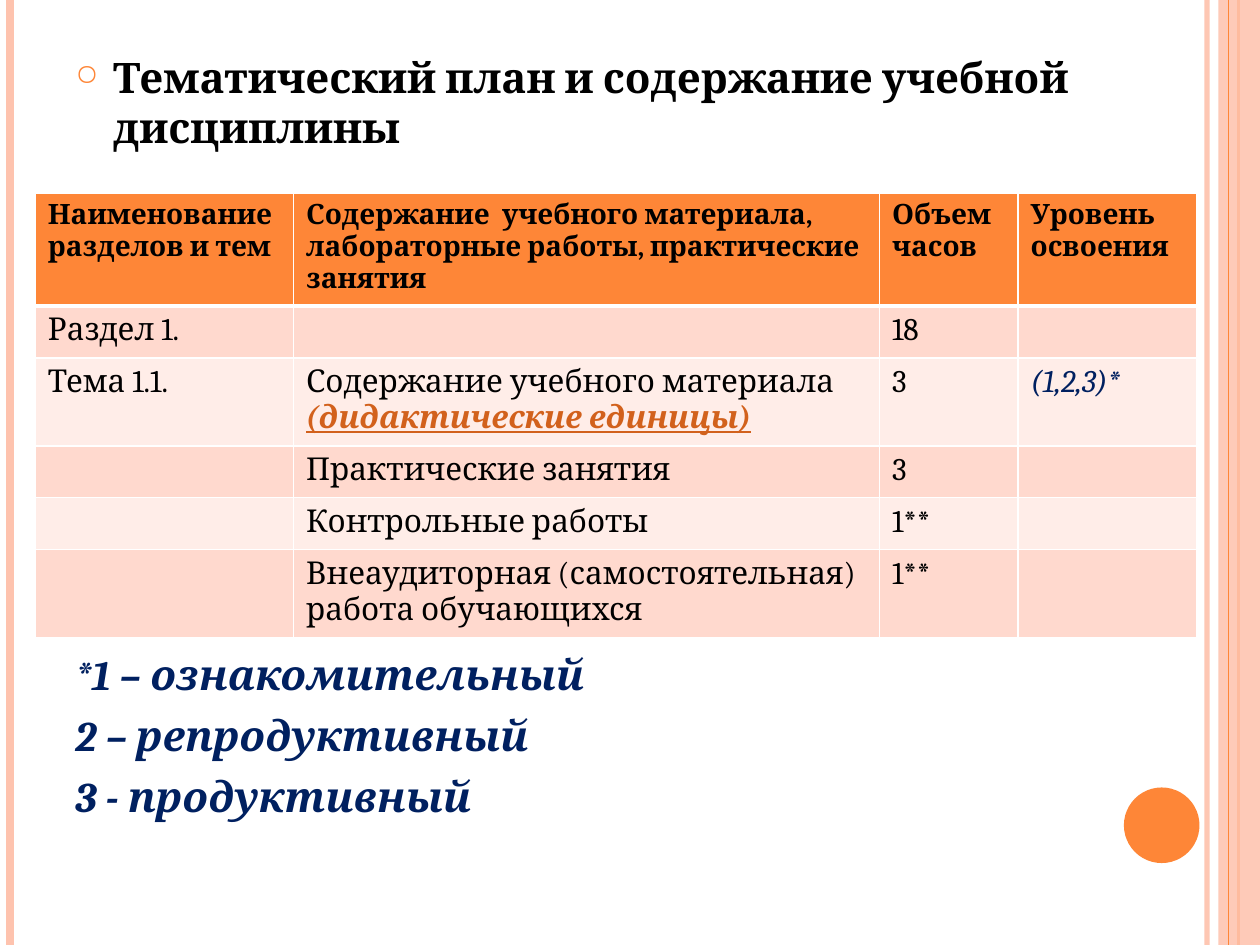
from dataclasses import dataclass

from lxml import etree
from pptx import Presentation
from pptx.dml.color import RGBColor
from pptx.enum import shapes, text
from pptx.oxml.ns import qn
from pptx.util import Inches, Pt


@dataclass(frozen=True)
class Theme:
    font: str = "Cambria"
    black: str = "000000"
    white: str = "FFFFFF"
    navy: str = "002060"
    orange: str = "FE8637"
    rust: str = "D2611C"
    peach: str = "FEC3AE"
    bands: tuple = ("FFD9CE", "FFEDE8")
    title: int = 24
    head: int = 16
    body: int = 18


def add(node, tag, **attrs):
    return etree.SubElement(node, qn(tag), attrs)


def fade(fill, share):
    """Set the opacity of a solid fill, in percent."""
    color = next(fill.iter(qn("a:srgbClr")))
    add(color, "a:alpha", val=str(share * 1000))


class Board:
    def __init__(self, slide, theme):
        self.slide, self.theme = slide, theme

    def style(self, run, size, color, bold=False, italic=False, under=False):
        font = run.font
        font.name, font.size = self.theme.font, Pt(size)
        font.bold, font.italic, font.underline = bold, italic, under
        font.color.rgb = RGBColor.from_string(color)

    def rule(self, x, color, width, share=100):
        """Draw a vertical line over the full slide height."""
        line = self.slide.shapes.add_connector(
            shapes.MSO_CONNECTOR.STRAIGHT, Inches(x), 0, Inches(x), Inches(7.5))
        line.line.color.rgb = RGBColor.from_string(color)
        line.line.width = Pt(width)
        if share < 100:
            fade(line._element.spPr, share)
        add(line._element.spPr, "a:effectLst")

    def shape(self, kind, box, color, share=100):
        item = self.slide.shapes.add_shape(kind, *map(Inches, box))
        item.shadow.inherit = False
        item.fill.solid()
        item.fill.fore_color.rgb = RGBColor.from_string(color)
        item.line.fill.background()
        if share < 100:
            fade(item._element.spPr, share)

    def text(self, box, lines, color, italic=False, bullet=None):
        frame = self.slide.shapes.add_textbox(*map(Inches, box)).text_frame
        frame.word_wrap = True
        frame.vertical_anchor = text.MSO_ANCHOR.TOP
        frame.text = "\n".join(lines)
        for para in frame.paragraphs:
            para.space_before = Pt(6)
            self.style(para.runs[0], self.theme.title, color, True, italic)
            if bullet:
                self.mark(para, bullet)

    def mark(self, para, sign):
        """Give a paragraph a hanging bullet."""
        props = para._p.get_or_add_pPr()
        props.set("marL", str(Inches(0.3)))
        props.set("indent", str(-Inches(0.3)))
        color = add(props, "a:buClr")
        add(color, "a:srgbClr", val=self.theme.orange)
        add(props, "a:buSzPct", val="70000")
        add(props, "a:buChar", char=sign)

    def edge(self, cell, bottom):
        props = cell._tc.get_or_add_tcPr()
        widths = (("L", 1), ("R", 1), ("T", 1), ("B", bottom))
        for spot, (side, width) in enumerate(widths):
            line = etree.Element(qn(f"a:ln{side}"), w=str(Pt(width)))
            fill = add(line, "a:solidFill")
            add(fill, "a:srgbClr", val=self.theme.white)
            props.insert(spot, line)

    def table(self, spot, cols, rows, data):
        """Fill a banded table; a cell is plain text or (text, style) runs."""
        look = self.theme
        grid = self.slide.shapes.add_table(
            len(rows), len(cols), *map(Inches, (*spot, sum(cols), sum(rows)))).table
        for col, width in zip(grid.columns, cols):
            col.width = Inches(width)
        for r, (height, line) in enumerate(zip(rows, data)):
            grid.rows[r].height = Inches(height)
            head = r == 0
            size = look.head if head else look.body
            shade = look.orange if head else look.bands[(r - 1) % 2]
            for c, value in enumerate(line):
                cell = grid.cell(r, c)
                cell.fill.solid()
                cell.fill.fore_color.rgb = RGBColor.from_string(shade)
                self.edge(cell, 3 if head else 1)
                parts = [(value, {})] if isinstance(value, str) else value
                for words, extra in parts:
                    if words:
                        run = cell.text_frame.paragraphs[0].add_run()
                        run.text = words
                        self.style(run, size, **{"color": look.black, "bold": head, **extra})


def main():
    deck = Presentation()
    deck.slide_width, deck.slide_height = Inches(10), Inches(7.5)
    look = Theme()
    board = Board(deck.slides.add_slide(deck.slide_layouts[6]), look)

    board.rule(9.58, look.peach, 3, 93)
    board.rule(0.08, look.peach, 4.5)
    board.rule(9.83, look.orange, 1.5)
    board.shape(shapes.MSO_SHAPE.RECTANGLE, (9.67, 0, 0.33, 7.5), look.peach, 87)
    board.rule(9.75, look.orange, 0.75)
    board.shape(shapes.MSO_SHAPE.OVAL, (8.92, 6.25, 0.6, 0.6), look.orange)

    board.text((0.5, 0.36, 8.91, 1),
               ["Тематический план и содержание учебной дисциплины"],
               look.black, bullet="○")
    board.text((0.5, 5.1, 8.3, 1.6),
               ["*1 – ознакомительный", "2 – репродуктивный", "3 - продуктивный"],
               look.navy, italic=True)

    units = {"color": look.rust, "bold": True, "italic": True, "under": True}
    level = {"color": look.navy, "italic": True}
    board.table((0.28, 1.53), (2.05, 4.65, 1.1, 1.42),
                (0.85, 0.41, 0.68, 0.41, 0.41, 0.68), [
        ("Наименование разделов и тем",
         "Содержание  учебного материала, лабораторные работы, практические занятия",
         "Объем часов", "Уровень освоения"),
        ("Раздел 1.", "", "18", ""),
        ("Тема 1.1.",
         [("Содержание учебного материала ", {}), ("(дидактические единицы)", units)],
         "3", [("(1,2,3)*", level)]),
        ("", "Практические занятия", "3", ""),
        ("", "Контрольные работы", "1**", ""),
        ("", "Внеаудиторная (самостоятельная) работа обучающихся", "1**", ""),
    ])
    deck.save("out.pptx")


if __name__ == "__main__":
    main()
